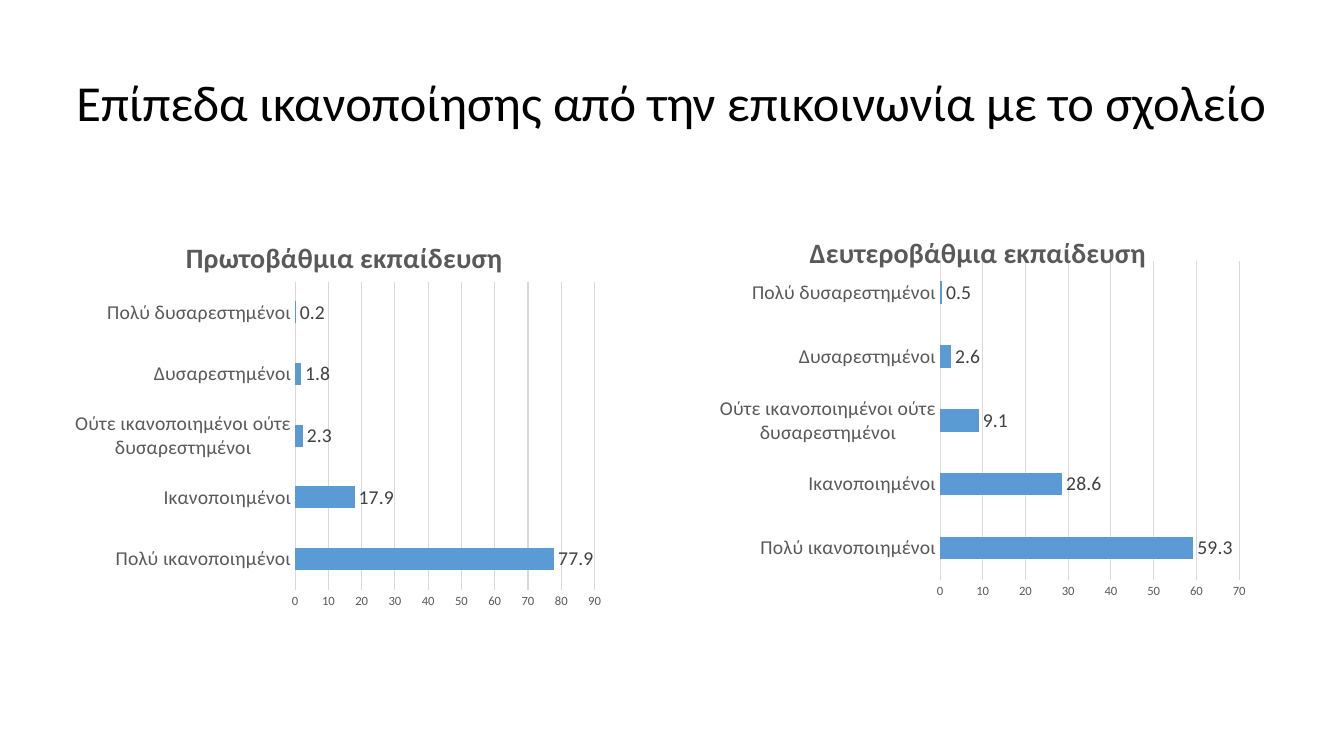
from dataclasses import dataclass

from lxml import etree
from pptx import Presentation
from pptx.chart.data import CategoryChartData
from pptx.dml.color import RGBColor
from pptx.enum.chart import XL_CHART_TYPE, XL_LABEL_POSITION, XL_TICK_MARK
from pptx.enum.text import MSO_ANCHOR
from pptx.oxml.ns import qn
from pptx.util import Inches, Pt

BAR = XL_CHART_TYPE.BAR_CLUSTERED
OUT_END = XL_LABEL_POSITION.OUTSIDE_END
NO_TICK = XL_TICK_MARK.NONE
MIDDLE = MSO_ANCHOR.MIDDLE


@dataclass(frozen=True)
class Theme:
    face: str = "Calibri"
    ink: str = "000000"
    gray: str = "595959"
    dark: str = "404040"
    rule: str = "D9D9D9"
    bar: str = "5B9BD5"
    head: int = 36
    title: int = 20
    label: int = 14
    scale: int = 9


LEVELS = [
    "Πολύ ικανοποιημένοι",
    "Ικανοποιημένοι",
    "Ούτε ικανοποιημένοι ούτε δυσαρεστημένοι",
    "Δυσαρεστημένοι",
    "Πολύ δυσαρεστημένοι",
]

# Chart title, values, axis end, box in inches, title place, plot area
CHARTS = [
    ("Πρωτοβάθμια εκπαίδευση", [77.9, 17.9, 2.3, 1.8, 0.2], 90,
     (0.66, 2.06, 5.4, 4.08), (0.21, 0.06), (0.42, 0.18, 0.55, 0.75)),
    ("Δευτεροβάθμια εκπαίδευση", [59.3, 28.6, 9.1, 2.6, 0.5], 70,
     (6.86, 2.06, 5.6, 4.06), (0.2, 0.05), (0.44, 0.13, 0.53, 0.78)),
]


def layout(spot, inner=False):
    """Build a manual chart layout from fractions of the chart size."""
    root = etree.Element(qn("c:layout"))
    manual = etree.SubElement(root, qn("c:manualLayout"))
    pairs = [("layoutTarget", "inner")] if inner else []
    pairs += [("xMode", "edge"), ("yMode", "edge")]
    pairs += zip("xywh", spot)
    for tag, val in pairs:
        etree.SubElement(manual, qn(f"c:{tag}")).set("val", str(val))
    return root


class Deck:
    def __init__(self, theme):
        self.theme = theme
        self.prs = Presentation()
        self.prs.slide_width = Inches(13.33)
        self.prs.slide_height = Inches(7.5)
        self.slide = self.prs.slides.add_slide(self.prs.slide_layouts[6])

    def font(self, font, size, color, bold=False):
        font.name = self.theme.face
        font.size = Pt(size)
        font.bold = bold
        font.color.rgb = RGBColor.from_string(color)

    def line(self, fmt):
        fmt.color.rgb = RGBColor.from_string(self.theme.rule)
        fmt.width = Pt(0.75)

    def head(self, text, box):
        frame = self.slide.shapes.add_textbox(*map(Inches, box)).text_frame
        frame.word_wrap = True
        frame.vertical_anchor = MIDDLE
        para = frame.paragraphs[0]
        para.text = text
        para.line_spacing = 0.9
        self.font(para.font, self.theme.head, self.theme.ink)

    def chart(self, title, vals, top, box, spot, area):
        look = self.theme
        data = CategoryChartData()
        data.categories = LEVELS
        data.add_series("Series 1", vals)
        chart = self.slide.shapes.add_chart(BAR, *map(Inches, box), data).chart
        chart.has_legend = False
        self.font(chart.font, 10, look.ink)

        # Chart title
        chart.has_title = True
        para = chart.chart_title.text_frame.paragraphs[0]
        para.text = title
        self.font(para.font, look.title, look.gray, True)

        # Axes
        cat, val = chart.category_axis, chart.value_axis
        for axis, size in ((cat, look.label), (val, look.scale)):
            axis.major_tick_mark = axis.minor_tick_mark = NO_TICK
            self.font(axis.tick_labels.font, size, look.gray)
        self.line(cat.format.line)
        val.format.line.fill.background()
        val.minimum_scale, val.maximum_scale, val.major_unit = 0, top, 10
        val.has_major_gridlines = True
        self.line(val.major_gridlines.format.line)

        # Bars and their labels
        plot = chart.plots[0]
        plot.gap_width = 182
        plot.vary_by_categories = False
        bars = plot.series[0]
        bars.format.fill.solid()
        bars.format.fill.fore_color.rgb = RGBColor.from_string(look.bar)
        tags = bars.data_labels
        tags.show_value = True
        tags.position = OUT_END
        self.font(tags.font, look.label, look.dark)

        # Places of title and plot area
        root = chart.element.chart
        name, zone = root.find(qn("c:title")), root.plotArea
        for part in (name, zone):
            for old in part.findall(qn("c:layout")):
                part.remove(old)
        name.find(qn("c:tx")).addnext(layout(spot))
        zone.insert(0, layout(area, True))


def main():
    deck = Deck(Theme())
    deck.head("Επίπεδα ικανοποίησης από την επικοινωνία με το σχολείο",
              (0.66, 0.32, 12.37, 1.45))
    for row in CHARTS:
        deck.chart(*row)
    deck.prs.save("out.pptx")


if __name__ == "__main__":
    main()
